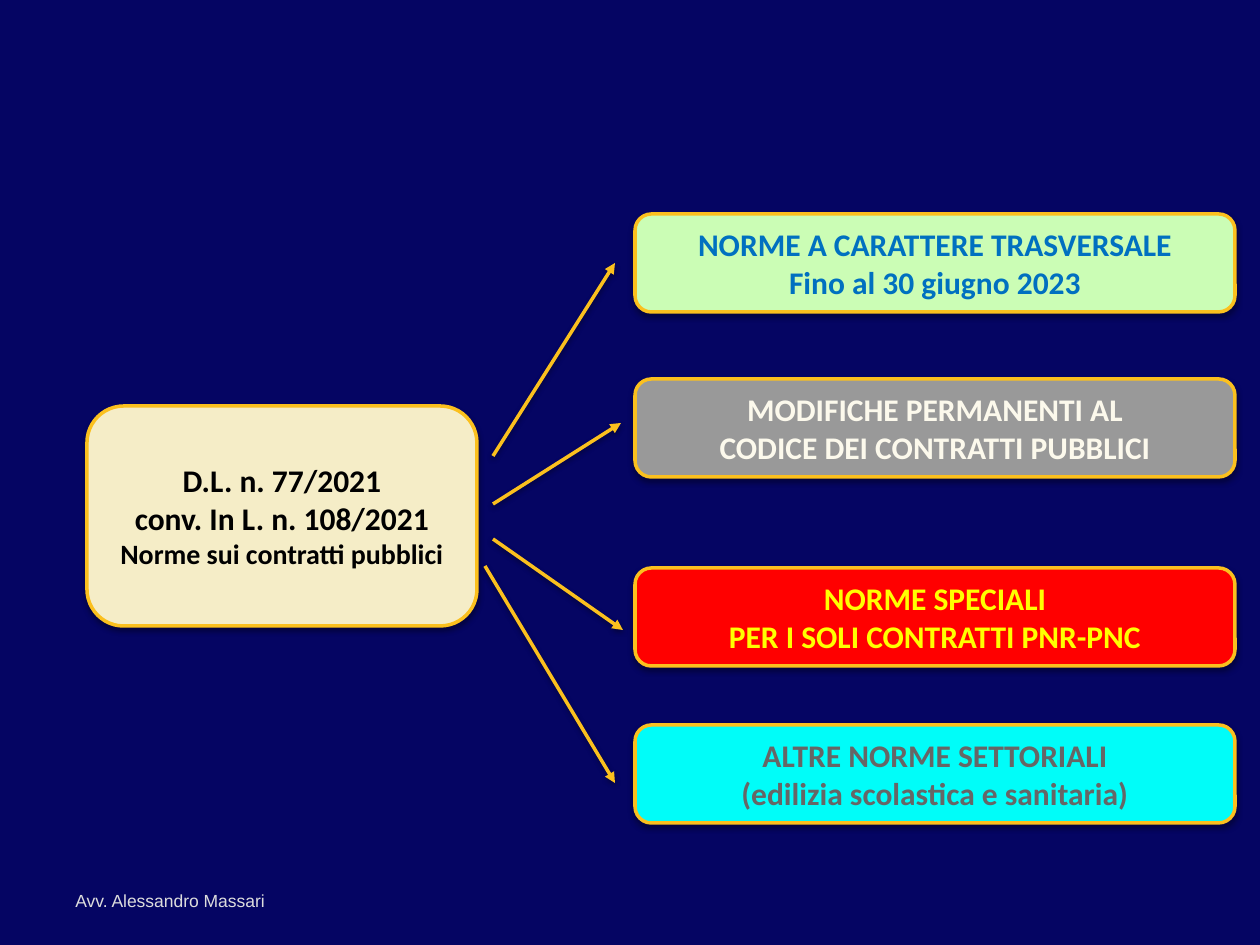
import pptx
import pptx.dml.color
import pptx.enum.shapes
import pptx.enum.text
import pptx.oxml
import pptx.oxml.ns
import pptx.util

EMU_PER_PX = 914400 / 126
COLORS = {
    "background": "050563", "border": "FBC01E", "footer": "DDDDDD",
    "cream": "F5EDC7", "black": "000000", "green": "CBFDB5", "blue": "0070C0",
    "gray": "999999", "ivory": "FCF9EC", "red": "FF0000", "yellow": "FFFF00",
    "cyan": "00FDF9", "dark_gray": "666666",
}

FOOTER = "Avv. Alessandro Massari"
SOURCE_LAW = [("D.L. n. 77/2021", 18), ("conv. In L. n. 108/2021", 18),
              ("Norme sui contratti pubblici", 16)]
# top, fill, text colour, lines, arrow start, arrow end
TOPICS = [
    (214, "green", "blue", ["NORME A CARATTERE TRASVERSALE", "Fino al 30 giugno 2023"],
     (493, 456), (615, 263)),
    (379, "gray", "ivory", ["MODIFICHE PERMANENTI AL", "CODICE DEI CONTRATTI PUBBLICI"],
     (493, 504), (621, 423)),
    (568, "red", "yellow", ["NORME SPECIALI", "PER I SOLI CONTRATTI PNR-PNC"],
     (493, 539), (623, 630)),
    (725, "cyan", "dark_gray", ["ALTRE NORME SETTORIALI", "(edilizia scolastica e sanitaria)"],
     (485, 566), (615, 783)),
]
TOPIC_LEFT, TOPIC_WIDTH, TOPIC_HEIGHT = 635, 600, 98


def px(value):
    return pptx.util.Emu(round(value * EMU_PER_PX))


def rgb(name):
    return pptx.dml.color.RGBColor.from_string(COLORS[name])


def write_text(frame, lines, *, color, font="Calibri", bold=True, align="CENTER", inset=None):
    """Fill a text frame from (text, size) pairs, one paragraph each."""
    frame.word_wrap = True
    frame.vertical_anchor = pptx.enum.text.MSO_ANCHOR.MIDDLE
    if inset is not None:
        frame.margin_left = frame.margin_right = px(inset)
        frame.margin_top = frame.margin_bottom = px(inset)
    for index, (text, size) in enumerate(lines):
        para = frame.add_paragraph() if index else frame.paragraphs[0]
        para.alignment = getattr(pptx.enum.text.PP_ALIGN, align)
        span = para.add_run()
        span.text = text
        span.font.name = font
        span.font.size = pptx.util.Pt(size)
        span.font.bold = bold
        span.font.color.rgb = rgb(color)


def style_outline(item, opacity, distance):
    """Give a box or arrow the gold line and a soft shadow below it."""
    item.line.color.rgb = rgb("border")
    item.line.width = pptx.util.Pt(2)
    item.element.spPr.append(pptx.oxml.parse_xml(
        f'<a:effectLst {pptx.oxml.ns.nsdecls("a")}>'
        f'<a:outerShdw blurRad="{pptx.util.Pt(3)}" dist="{pptx.util.Pt(distance)}" '
        'dir="5400000" rotWithShape="0"><a:srgbClr val="000000">'
        f'<a:alpha val="{opacity * 1000}"/></a:srgbClr></a:outerShdw></a:effectLst>'))


def add_box(page, left, top, width, height, fill, color, lines):
    box = page.shapes.add_shape(pptx.enum.shapes.MSO_SHAPE.ROUNDED_RECTANGLE,
                                px(left), px(top), px(width), px(height))
    box.fill.solid()
    box.fill.fore_color.rgb = rgb(fill)
    style_outline(box, 35, 1.8)
    write_text(box.text_frame, lines, color=color, inset=6)


def add_arrow(page, start, end):
    arrow = page.shapes.add_connector(pptx.enum.shapes.MSO_CONNECTOR.STRAIGHT,
                                      *map(px, start + end))
    style_outline(arrow, 38, 1.6)
    arrow.line._get_or_add_ln().append(pptx.oxml.parse_xml(
        f'<a:tailEnd {pptx.oxml.ns.nsdecls("a")} type="triangle"/>'))


def main():
    deck = pptx.Presentation()
    deck.slide_width, deck.slide_height = px(1260), px(945)
    page = deck.slides.add_slide(deck.slide_layouts[6])
    page.background.fill.solid()
    page.background.fill.fore_color.rgb = rgb("background")

    footer = page.shapes.add_textbox(px(63), px(876), px(294), px(50))
    write_text(footer.text_frame, [(FOOTER, 10)], color="footer", font="Arial",
               bold=False, align="LEFT")
    add_box(page, 87, 406, 390, 220, "cream", "black", SOURCE_LAW)
    for top, fill, color, lines, start, end in TOPICS:
        add_box(page, TOPIC_LEFT, top, TOPIC_WIDTH, TOPIC_HEIGHT, fill, color,
                [(line, 18) for line in lines])
        add_arrow(page, start, end)
    deck.save("out.pptx")


if __name__ == "__main__":
    main()
